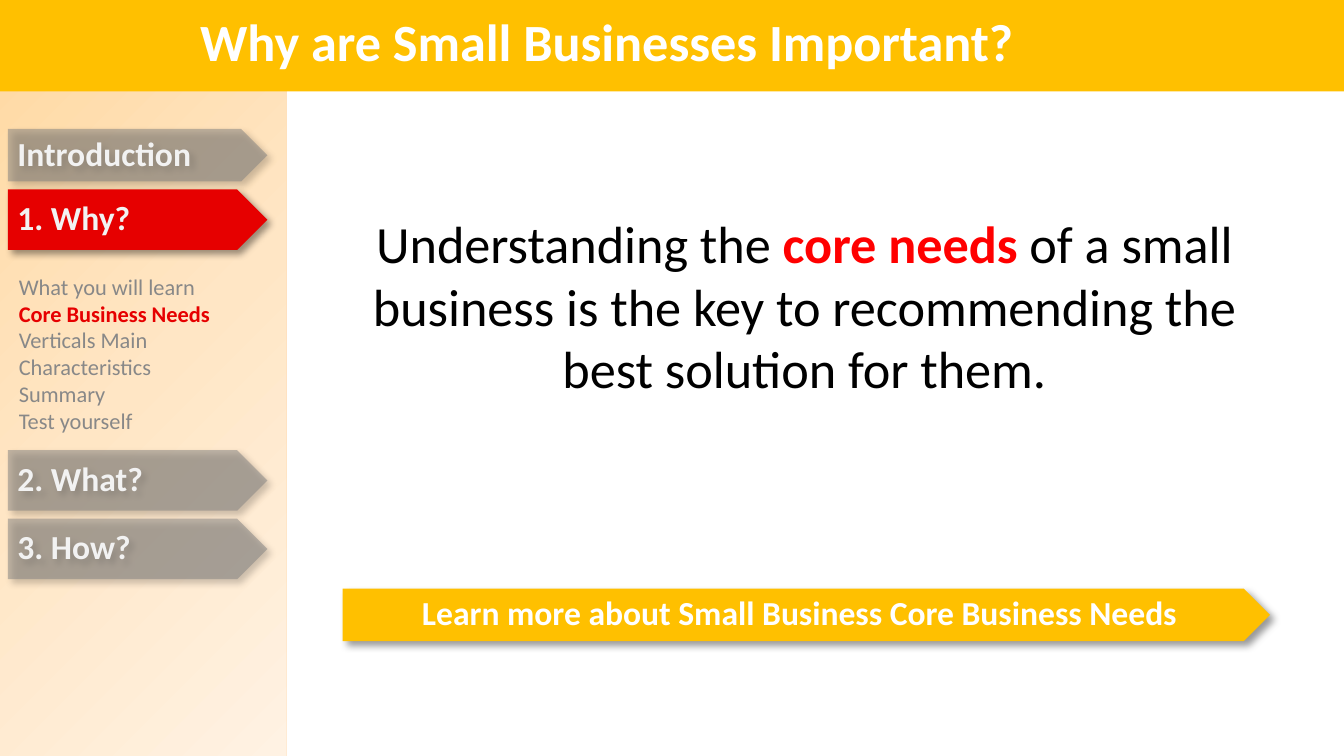
from collections import namedtuple

from lxml import etree
from pptx import Presentation, util as u
from pptx.dml.color import RGBColor
from pptx.enum import shapes, text
from pptx.oxml import parse_xml
from pptx.oxml.ns import nsdecls, qn

COLUMNS, ROWS = 100, 56.25
CELL = u.Inches(0.1)
FONT = "Calibri"
GOLD = RGBColor(0xFF, 0xC0, 0x00)
ACTIVE = RGBColor(0xE6, 0x00, 0x00)
RED = RGBColor(0xFF, 0x00, 0x00)
GRAY = RGBColor(0x80, 0x80, 0x80)
LIST_GRAY = RGBColor(0x88, 0x88, 0x88)
PALE = RGBColor(0xF2, 0xF2, 0xF2)
WHITE = RGBColor(0xFF, 0xFF, 0xFF)
BLACK = RGBColor(0x00, 0x00, 0x00)
SIDEBAR_STOPS = ((0, "FFD8A0"), (50, "FFE6C5"), (100, "FFF2E3"))

Box = namedtuple("Box", "left top width height")


def inside(box, left, top, width, height):
    return Box(box.left + left, box.top + top, width, height)


def lengths(box):
    return [u.Emu(round(side * CELL)) for side in box]


def style(span, size, color, bold=False):
    span.font.name = FONT
    span.font.size = u.Pt(size)
    span.font.bold = bold
    span.font.color.rgb = color


def set_frame(frame, inset=0.0, anchor=text.MSO_ANCHOR.TOP):
    frame.word_wrap = True
    frame.vertical_anchor = anchor
    frame.margin_left = frame.margin_right = u.Inches(inset)
    frame.margin_top = frame.margin_bottom = u.Inches(inset)


def add_panel(page, box, color=None, kind=shapes.MSO_SHAPE.RECTANGLE):
    panel = page.shapes.add_shape(kind, *lengths(box))
    panel.shadow.inherit = False
    panel.line.fill.background()
    if color is not None:
        panel.fill.solid()
        panel.fill.fore_color.rgb = color
    return panel


def add_text(page, box, anchor=text.MSO_ANCHOR.TOP):
    frame = page.shapes.add_textbox(*lengths(box)).text_frame
    set_frame(frame, anchor=anchor)
    return frame


def set_gradient(panel, stops):
    panel.fill.gradient()
    panel.fill.gradient_angle = 315
    stop_list = panel.fill._fill._gradFill.find(qn("a:gsLst"))
    for stop in list(stop_list):
        stop_list.remove(stop)
    for share, color in stops:
        stop = etree.SubElement(stop_list, qn("a:gs"), pos=str(share * 1000))
        etree.SubElement(stop, qn("a:srgbClr"), val=color)


def add_shadow(panel):
    effects = panel._element.spPr.find(qn("a:effectLst"))
    effects.append(parse_xml(
        f'<a:outerShdw {nsdecls("a")} blurRad="{u.Pt(4)}" dist="{u.Pt(3)}" '
        'dir="2700000" algn="tl" rotWithShape="0"><a:srgbClr val="000000">'
        '<a:alpha val="40000"/></a:srgbClr></a:outerShdw>'))


def add_arrow(page, box, label, fill, color, align, faded=False):
    arrow = add_panel(page, box, fill, shapes.MSO_SHAPE.PENTAGON)
    add_shadow(arrow)
    if faded:
        tint = arrow._element.spPr.find(qn("a:solidFill"))[0]
        etree.SubElement(tint, qn("a:alpha"), val="50000")
    frame = arrow.text_frame
    set_frame(frame, 0.01, text.MSO_ANCHOR.MIDDLE)
    if align == text.PP_ALIGN.LEFT:
        frame.margin_left = u.Inches(0.07)
    frame.text = label
    para = frame.paragraphs[0]
    para.alignment = align
    para.line_spacing = 0.9
    style(para.runs[0], 18, color, bold=True)


def add_sidebar(page, box):
    set_gradient(add_panel(page, box), SIDEBAR_STOPS)
    chapters = (("Introduction", 9.6, 3.9), ("1. Why?", 14.1, 4.5),
                ("2. What?", 33.5, 4.5), ("3. How?", 38.6, 4.5))
    for label, top, height in chapters:
        current = label == "1. Why?"
        add_arrow(page, inside(box, 0.6, top, 19.3, height), label,
                  ACTIVE if current else GRAY, PALE,
                  text.PP_ALIGN.LEFT, faded=not current)
    topics = ("What you will learn", "Core Business Needs",
              "Verticals Main Characteristics", "Summary", "Test yourself")
    frame = add_text(page, inside(box, 1.4, 20.3, 19.6, 35.9))
    frame.text = "\n".join(topics)
    for para in frame.paragraphs:
        current = para.text == "Core Business Needs"
        style(para.runs[0], 12, ACTIVE if current else LIST_GRAY, current)


def add_banner(page, box):
    add_panel(page, box, GOLD)
    frame = add_text(page, inside(box, 14.9, -0.3, 71.4, 6.7),
                     text.MSO_ANCHOR.MIDDLE)
    frame.text = "Why are Small Businesses Important?"
    style(frame.paragraphs[0].runs[0], 28, WHITE, bold=True)


def add_message(page, box):
    frame = add_text(page, inside(box, 0, 0, 68.7, 43.8))
    frame.margin_top = u.Inches(0.47)
    para = frame.paragraphs[0]
    para.alignment = text.PP_ALIGN.CENTER
    parts = (("Understanding the ", BLACK), ("core needs ", RED),
             ("of a small business is the key to recommending "
              "the best solution for them.", BLACK))
    for words, color in parts:
        span = para.add_run()
        span.text = words
        style(span, 28, color, bold=color == RED)
    add_arrow(page, inside(box, 0, 32.8, 69, 3.9),
              "Learn more about Small Business Core Business Needs",
              GOLD, WHITE, text.PP_ALIGN.CENTER)


def main():
    deck = Presentation()
    deck.slide_width = u.Emu(COLUMNS * CELL)
    deck.slide_height = u.Emu(round(ROWS * CELL))
    page = deck.slides.add_slide(deck.slide_layouts[6])
    add_sidebar(page, Box(0, 0, 21.3, ROWS))
    add_banner(page, Box(0, 0, COLUMNS, 6.8))
    add_message(page, Box(25.5, 11, 69, 43.8))
    deck.save("out.pptx")


if __name__ == "__main__":
    main()
